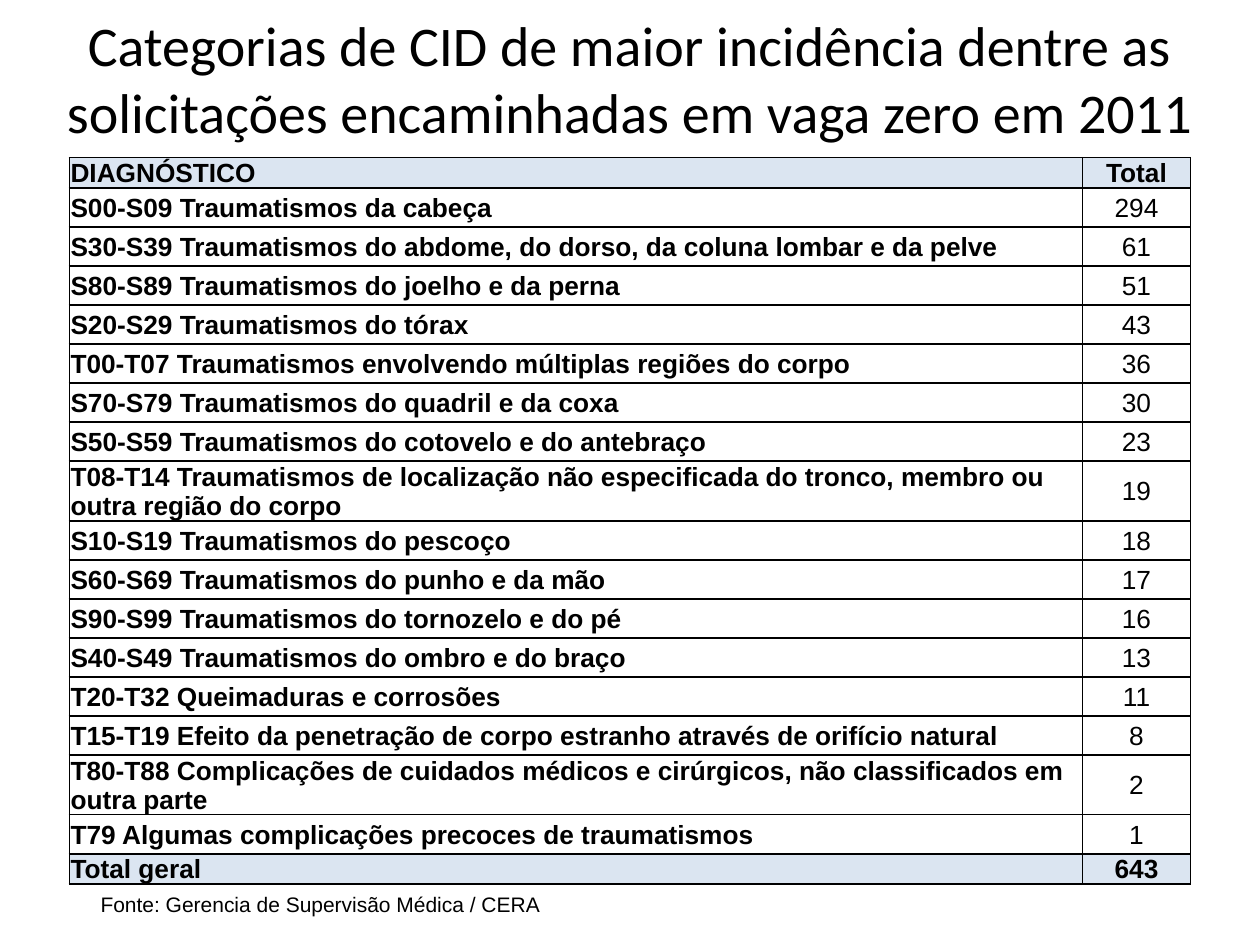
from dataclasses import dataclass

from lxml.etree import SubElement
from pptx import Presentation
from pptx.dml.color import RGBColor
from pptx.enum.text import MSO_ANCHOR as Anchor, PP_ALIGN as Align
from pptx.oxml.ns import qn
from pptx.util import Inches, Pt


@dataclass(frozen=True)
class Theme:
    """Colours, fonts and type sizes of the slide."""
    ink: str = "000000"
    band: str = "DBE5F1"
    title_font: str = "Calibri"
    body_font: str = "Arial"
    title_size: int = 32
    table_size: int = 15
    source_size: int = 12
    border: int = 1


THEME = Theme()
TITLE = ("Categorias de CID de maior incidência dentre as "
         "solicitações encaminhadas em vaga zero em 2011")
SOURCE = "Fonte: Gerencia de Supervisão Médica / CERA"
DIAGNOSES = [
    ("S00-S09 Traumatismos da cabeça", 294),
    ("S30-S39 Traumatismos do abdome, do dorso, da coluna lombar e da pelve", 61),
    ("S80-S89 Traumatismos do joelho e da perna", 51),
    ("S20-S29 Traumatismos do tórax", 43),
    ("T00-T07 Traumatismos envolvendo múltiplas regiões do corpo", 36),
    ("S70-S79 Traumatismos do quadril e da coxa", 30),
    ("S50-S59 Traumatismos do cotovelo e do antebraço", 23),
    ("T08-T14 Traumatismos de localização não especificada do tronco, "
     "membro ou outra região do corpo", 19),
    ("S10-S19 Traumatismos do pescoço", 18),
    ("S60-S69 Traumatismos do punho e da mão", 17),
    ("S90-S99 Traumatismos do tornozelo e do pé", 16),
    ("S40-S49 Traumatismos do ombro e do braço", 13),
    ("T20-T32 Queimaduras e corrosões", 11),
    ("T15-T19 Efeito da penetração de corpo estranho através de orifício natural", 8),
    ("T80-T88 Complicações de cuidados médicos e cirúrgicos, "
     "não classificados em outra parte", 2),
    ("T79 Algumas complicações precoces de traumatismos", 1),
]
COLUMN_WIDTHS = (8.04, 0.86)
BAND_HEIGHT, ROW_HEIGHT, TALL_HEIGHT = 0.11, 0.31, 0.41
LINE_LIMIT = 80


def write_text(frame, text, *, size, font=THEME.body_font, bold=False, align=Align.LEFT):
    """Write one formatted paragraph into a text frame."""
    frame.word_wrap = True
    para = frame.paragraphs[0]
    para.alignment = align
    span = para.add_run()
    span.text = text
    span.font.size = Pt(size)
    span.font.name = font
    span.font.bold = bold
    span.font.color.rgb = RGBColor.from_string(THEME.ink)


def add_text(page, text, left, top, width, height, *, anchor=Anchor.TOP, **style):
    """Add a text box with one formatted paragraph."""
    box = page.shapes.add_textbox(Inches(left), Inches(top), Inches(width), Inches(height))
    box.text_frame.vertical_anchor = anchor
    write_text(box.text_frame, text, **style)


def set_borders(cell):
    """Draw a solid line on every side of a cell."""
    properties = cell._tc.get_or_add_tcPr()
    for index, side in enumerate(("a:lnL", "a:lnR", "a:lnT", "a:lnB")):
        line = SubElement(properties, qn(side), w=str(Pt(THEME.border)))
        properties.insert(index, line)
        SubElement(SubElement(line, qn("a:solidFill")), qn("a:srgbClr"), val=THEME.ink)


def fill_cell(cell, text, *, banded, **style):
    """Set the text, margins, fill and borders of a cell."""
    cell.margin_left = cell.margin_right = cell.margin_top = Inches(0.01)
    cell.margin_bottom = 0
    cell.vertical_anchor = Anchor.BOTTOM if banded else Anchor.MIDDLE
    if banded:
        cell.fill.solid()
        cell.fill.fore_color.rgb = RGBColor.from_string(THEME.band)
    else:
        cell.fill.background()
    set_borders(cell)
    write_text(cell.text_frame, text, size=THEME.table_size, **style)


def row_height(label, banded):
    """Give the height a row needs for its label."""
    if banded:
        return BAND_HEIGHT
    return TALL_HEIGHT if len(label) > LINE_LIMIT else ROW_HEIGHT


def add_diagnosis_table(page, left, top):
    """Add the table of diagnoses between its heading and total rows."""
    total = sum(count for _, count in DIAGNOSES)
    rows = [("DIAGNÓSTICO", "Total"), *DIAGNOSES, ("Total geral", total)]
    table = page.shapes.add_table(
        len(rows), len(COLUMN_WIDTHS), Inches(left), Inches(top),
        Inches(sum(COLUMN_WIDTHS)), Inches(5.87)).table
    table.first_row = table.horz_banding = False
    for column, width in zip(table.columns, COLUMN_WIDTHS):
        column.width = Inches(width)
    for index, (label, count) in enumerate(rows):
        banded = index in (0, len(rows) - 1)
        table.rows[index].height = Inches(row_height(label, banded))
        fill_cell(table.cell(index, 0), label, banded=banded, bold=True)
        fill_cell(table.cell(index, 1), str(count), banded=banded, bold=banded,
                  align=Align.CENTER)


def main():
    """Build the slide and save the deck."""
    deck = Presentation()
    deck.slide_width, deck.slide_height = Inches(10), Inches(7.5)
    page = deck.slides.add_slide(deck.slide_layouts[6])
    add_diagnosis_table(page, 0.55, 1.25)
    add_text(page, TITLE, 0, -0.05, 10, 1.25, anchor=Anchor.BOTTOM,
             size=THEME.title_size, font=THEME.title_font, align=Align.CENTER)
    add_text(page, SOURCE, 0.7, 7.03, 9.3, 0.3, size=THEME.source_size)
    deck.save("out.pptx")


if __name__ == "__main__":
    main()
